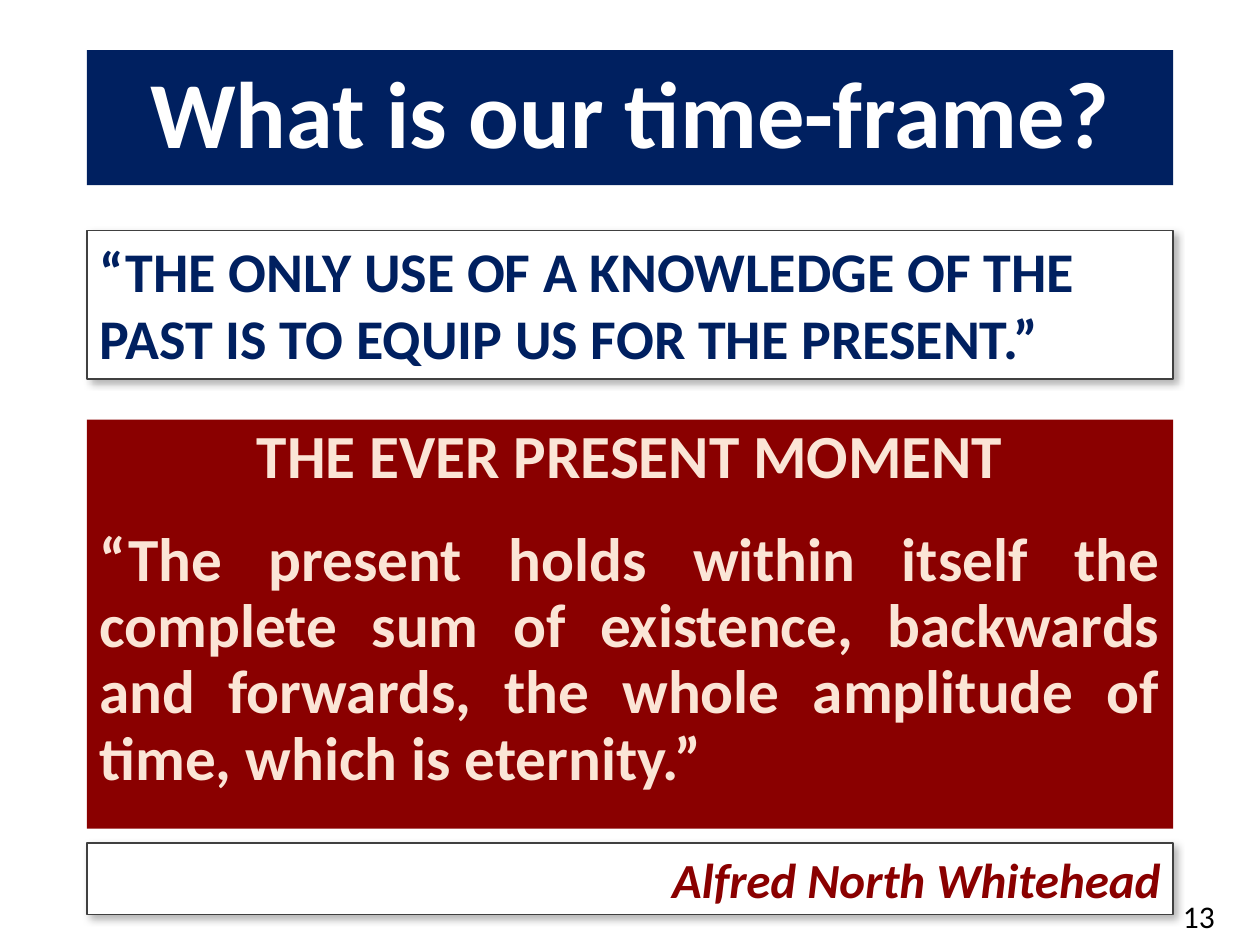
from dataclasses import dataclass

from lxml.etree import SubElement
from pptx import Presentation
from pptx.dml.color import RGBColor
from pptx.enum.shapes import MSO_SHAPE
from pptx.enum.text import MSO_ANCHOR, PP_ALIGN
from pptx.oxml.ns import qn
from pptx.util import Inches, Pt


@dataclass(frozen=True)
class Theme:
    font: str = "Calibri"
    navy: str = "002060"
    red: str = "8A0000"
    cream: str = "FBE5D6"
    white: str = "FFFFFF"
    black: str = "000000"
    outline: str = "404040"
    title: float = 54
    body: float = 35
    quote: float = 32
    author: float = 28
    number: float = 18


class Deck:
    """Stacks full-width bands in one column of the current slide."""

    LEFT, WIDTH = 0.069, 0.862  # shares of the slide width

    def __init__(self, theme):
        self.theme = theme
        self.prs = Presentation()
        self.prs.slide_width, self.prs.slide_height = Inches(10), Inches(7.5)
        self.s = self.prs.slides.add_slide(self.prs.slide_layouts[5])

    def box(self, top, height, left=LEFT, width=WIDTH):
        w, h = self.prs.slide_width, self.prs.slide_height
        return [int(v) for v in (left * w, top * h, width * w, height * h)]

    def fill(self, sp, color):
        sp.fill.solid()
        sp.fill.fore_color.rgb = RGBColor.from_string(color)

    def add_text(self, tf, lines, size, color, italic=False, bold=True,
                 spacing=1.0, gap=0, anchor=MSO_ANCHOR.TOP):
        """Each line is a (text, alignment) pair; gap parts the paragraphs."""
        tf.word_wrap = True
        tf.vertical_anchor = anchor
        for i, (text, align) in enumerate(lines):
            p = tf.add_paragraph() if i else tf.paragraphs[0]
            p.alignment, p.line_spacing = align, spacing
            p.space_before = Pt(gap if i else 0)
            r = p.add_run()
            r.text = text
            r.font.name, r.font.size = self.theme.font, Pt(size)
            r.font.bold, r.font.italic = bold, italic
            r.font.color.rgb = RGBColor.from_string(color)

    def title(self, text, top, height):
        sp = self.s.shapes.title
        sp.left, sp.top, sp.width, sp.height = self.box(top, height)
        self.fill(sp, self.theme.navy)
        self.add_text(sp.text_frame, [(text, PP_ALIGN.CENTER)],
                      self.theme.title, self.theme.white, spacing=0.9,
                      anchor=MSO_ANCHOR.MIDDLE)

    def band(self, top, height, fill, lines, size, color, **style):
        sp = self.s.shapes.add_shape(MSO_SHAPE.RECTANGLE, *self.box(top, height))
        sp.shadow.inherit = False
        self.fill(sp, fill)
        sp.line.fill.background()
        self.add_text(sp.text_frame, lines, size, color, **style)
        return sp

    def card(self, *args, **style):
        """A band with a thin outline and a soft shadow."""
        sp = self.band(*args, **style)
        sp.line.color.rgb = RGBColor.from_string(self.theme.outline)
        sp.line.width = Pt(0.75)
        effects = sp._element.spPr.find(qn("a:effectLst"))
        shadow = SubElement(effects, qn("a:outerShdw"), blurRad=str(Pt(4.5)),
                            dist=str(Pt(2.6)), dir=str(53 * 60000),
                            algn="tl", rotWithShape="0")
        color = SubElement(shadow, qn("a:srgbClr"), val=self.theme.black)
        SubElement(color, qn("a:alpha"), val="30000")

    def number(self, text, top, height, left, width):
        sp = self.s.shapes.add_textbox(*self.box(top, height, left, width))
        self.add_text(sp.text_frame, [(text, PP_ALIGN.RIGHT)],
                      self.theme.number, self.theme.black, bold=False)


def main():
    t = Theme()
    deck = Deck(t)

    # Heading
    deck.title("What is our time-frame?", 0.053, 0.143)

    # Opening quotation
    deck.card(0.244, 0.157, t.white,
              [("“THE ONLY USE OF A KNOWLEDGE OF THE PAST IS TO EQUIP US "
                "FOR THE PRESENT.”", PP_ALIGN.LEFT)], t.quote, t.navy)

    # Main quotation
    deck.band(0.444, 0.433, t.red,
              [("THE EVER PRESENT MOMENT", PP_ALIGN.CENTER),
               ("“The present holds within itself the complete sum of "
                "existence, backwards and forwards, the whole amplitude of "
                "time, which is eternity.”", PP_ALIGN.JUSTIFY)],
              t.body, t.cream, spacing=0.9, gap=21)

    # Author and slide number
    deck.card(0.892, 0.076, t.white,
              [("Alfred North Whitehead", PP_ALIGN.RIGHT)],
              t.author, t.red, italic=True)
    deck.number("13", 0.943, 0.053, 0.783, 0.191)

    deck.prs.save("out.pptx")


if __name__ == "__main__":
    main()
